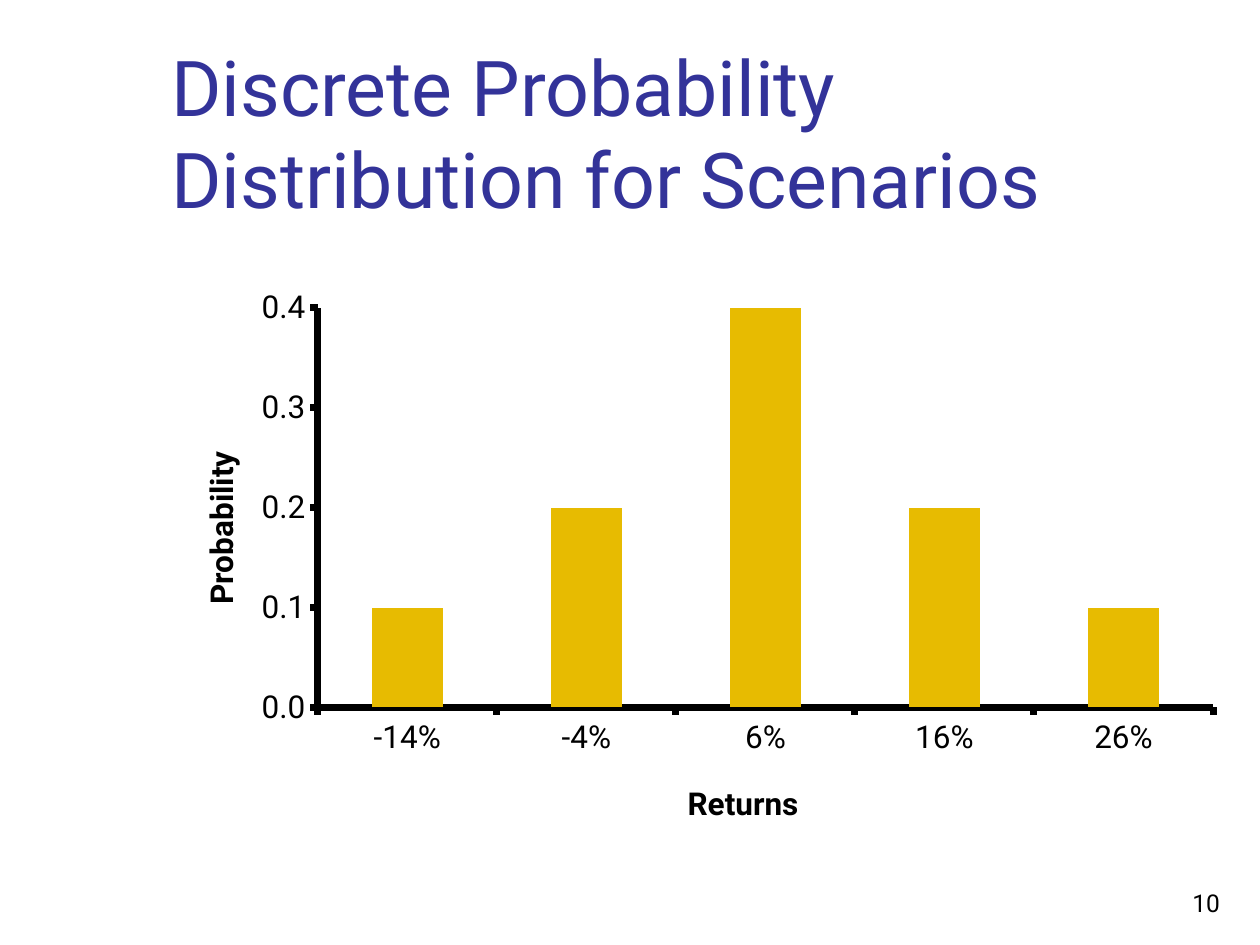
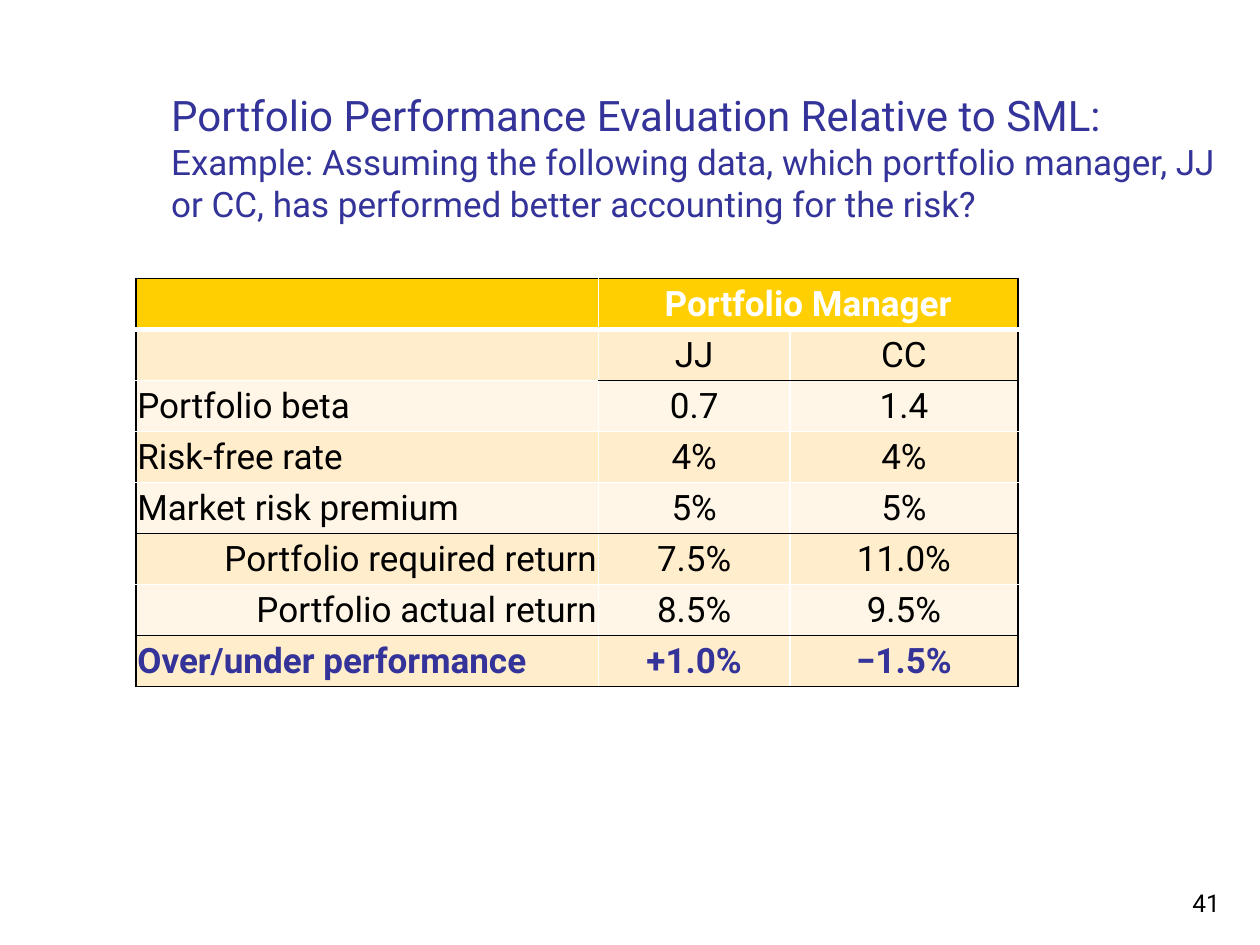
from dataclasses import dataclass

from lxml import etree
from pptx import Presentation
from pptx.chart.data import CategoryChartData
from pptx.dml.color import RGBColor
from pptx.enum.chart import XL_CHART_TYPE as ChartType, XL_TICK_MARK as Tick
from pptx.enum.text import MSO_ANCHOR as Anchor, PP_ALIGN as Align
from pptx.oxml import parse_xml
from pptx.oxml.ns import nsdecls, qn
from pptx.util import Inches, Pt


@dataclass(frozen=True)
class Theme:
    font: str = "Roboto"
    title: str = "333399"
    text: str = "000000"
    white: str = "FFFFFF"
    bar: str = "E7BB01"
    header: str = "FFCF01"
    bands: tuple = ("FFF6E7", "FFEDCC")
    title_size: int = 44
    heading_size: int = 24
    table_size: int = 20
    chart_size: int = 18
    number_size: int = 14


T = Theme()

# Content
CHART_TITLE = [("Discrete Probability Distribution for Scenarios", T.title_size)]
RETURNS = ["-14%", "-4%", "6%", "16%", "26%"]
PROBABILITIES = [0.1, 0.2, 0.4, 0.2, 0.1]

TABLE_TITLE = [
    ("Portfolio Performance Evaluation Relative to SML:", T.heading_size),
    ("Example: Assuming the following data, which portfolio manager, JJ or CC, "
     "has performed better accounting for the risk?", T.table_size),
]
MANAGERS = [
    ("", "Portfolio Manager", ""),
    ("", "JJ", "CC"),
    ("Portfolio beta", "0.7", "1.4"),
    ("Risk-free rate", "4%", "4%"),
    ("Market risk premium", "5%", "5%"),
    ("Portfolio required return", "7.5%", "11.0%"),
    ("Portfolio actual return", "8.5%", "9.5%"),
    ("Over/under performance", "+1.0%", "−1.5%"),
]
RETURN_ROWS = (5, 6)          # right-aligned labels
BLACK_RULES = (0, 5, 7, 8)    # full-width black lines, counted from the top
COL_WIDTHS = (3.67, 1.52, 1.81)

# Layout: left, top, width, height
TITLE_BOX = (1.26, 0.23, 8.52, 1.6)
CHART_BOX = (1.29, 2.21, 8.5, 4.5)
TABLE_BOX = (1.08, 2.21, 7, 3.24)
NUMBER_BOX = (7.7, 6.83, 2.08, 0.5)


def inches(box):
    return [Inches(v) for v in box]


def style(font, size, color, bold=False):
    font.name, font.size, font.bold = T.font, Pt(size), bold
    font.color.rgb = RGBColor.from_string(color)


def add_text(slide, box, lines, color, align=Align.LEFT):
    tf = slide.shapes.add_textbox(*inches(box)).text_frame
    tf.word_wrap, tf.vertical_anchor = True, Anchor.BOTTOM
    p = tf.paragraphs[0]
    p.alignment = align
    for i, (text, size) in enumerate(lines):
        if i:
            p.add_line_break()
        r = p.add_run()
        r.text = text
        style(r.font, size, color)


def add_slide(prs, title, number):
    slide = prs.slides.add_slide(prs.slide_layouts[6])
    add_text(slide, TITLE_BOX, title, T.title)
    add_text(slide, NUMBER_BOX, [(number, T.number_size)], T.text, Align.RIGHT)
    return slide


# Chart
def place(parent, before, inner=False, **fractions):
    """Fix the place of a chart part, in fractions of the chart."""
    for old in parent.findall(qn("c:layout")):
        parent.remove(old)
    layout = etree.Element(qn("c:layout"))
    manual = etree.SubElement(layout, qn("c:manualLayout"))
    settings = {"layoutTarget": "inner"} if inner else {}
    settings.update(xMode="edge", yMode="edge", **fractions)
    for name, value in settings.items():
        etree.SubElement(manual, qn(f"c:{name}")).set("val", str(value))
    parent.find(qn(before)).addprevious(layout)


def format_axis(axis, title, x, y):
    axis.has_major_gridlines = False
    axis.major_tick_mark, axis.minor_tick_mark = Tick.OUTSIDE, Tick.NONE
    axis.format.line.width = Pt(4)
    axis.format.line.color.rgb = RGBColor.from_string(T.text)
    style(axis.tick_labels.font, T.chart_size, T.text)
    r = axis.axis_title.text_frame.paragraphs[0].add_run()
    r.text = title
    style(r.font, T.chart_size, T.text, bold=True)
    place(axis.axis_title._element, "c:overlay", x=x, y=y)


def add_probability_chart(slide):
    data = CategoryChartData(number_format="0.0")
    data.categories = RETURNS
    data.add_series("Series 1", PROBABILITIES)
    chart = slide.shapes.add_chart(
        ChartType.COLUMN_CLUSTERED, *inches(CHART_BOX), data).chart
    chart.has_legend = chart.has_title = False
    style(chart.font, T.chart_size, T.text)
    plot = chart.plots[0]
    plot.gap_width, plot.vary_by_categories = 150, False
    fill = plot.series[0].format.fill
    fill.solid()
    fill.fore_color.rgb = RGBColor.from_string(T.bar)

    format_axis(chart.category_axis, "Returns", x=0.485, y=0.88)
    values = chart.value_axis
    format_axis(values, "Probability", x=0.03, y=0.295)
    values.minimum_scale, values.maximum_scale, values.major_unit = 0, 0.4, 0.1
    values.tick_labels.number_format = "#,##0.0"
    values.tick_labels.number_format_is_linked = False
    area = chart._chartSpace.find(f".//{qn('c:plotArea')}")
    place(area, "c:barChart", inner=True, x=0.145, y=0.052, w=0.836, h=0.705)


# Table
def add_border(cell, side, color, width=1):
    cell._tc.get_or_add_tcPr().append(parse_xml(
        f'<a:ln{side} {nsdecls("a")} w="{Pt(width)}"><a:solidFill>'
        f'<a:srgbClr val="{color}"/></a:solidFill></a:ln{side}>'))


def rule(line, col):
    """Colour and width of the horizontal line above row number `line`."""
    if line == 1:
        return T.white, 3
    black = line in BLACK_RULES or (line == 2 and col > 0)
    return (T.text if black else T.white), 1


def format_cell(cell, row, col, text):
    last_col = len(COL_WIDTHS) - 1
    at_right = col == last_col or cell.is_merge_origin
    add_border(cell, "L", T.white if col else T.text)
    add_border(cell, "R", T.text if at_right else T.white)
    add_border(cell, "T", *rule(row, col))
    add_border(cell, "B", *rule(row + 1, col))
    cell.fill.solid()
    cell.fill.fore_color.rgb = RGBColor.from_string(
        T.bands[row % 2] if row else T.header)
    cell.margin_left = cell.margin_right = cell.margin_top = Inches(0.01)
    cell.margin_bottom = 0
    cell.vertical_anchor = Anchor.MIDDLE
    if not text:
        return
    p = cell.text_frame.paragraphs[0]
    if col:
        p.alignment = Align.CENTER
    else:
        p.alignment = Align.RIGHT if row in RETURN_ROWS else Align.LEFT
    r = p.add_run()
    r.text = text
    last_row = len(MANAGERS) - 1
    color = {0: T.white, last_row: T.title}.get(row, T.text)
    style(r.font, T.table_size, color, bold=row in (0, last_row))


def add_manager_table(slide):
    table = slide.shapes.add_table(
        len(MANAGERS), len(COL_WIDTHS), *inches(TABLE_BOX)).table
    table.first_row = table.horz_banding = False
    for column, width in zip(table.columns, COL_WIDTHS):
        column.width = Inches(width)
    table.cell(0, 1).merge(table.cell(0, 2))
    for row, texts in enumerate(MANAGERS):
        for col, text in enumerate(texts):
            cell = table.cell(row, col)
            if not cell.is_spanned:
                format_cell(cell, row, col, text)


def main():
    prs = Presentation()
    prs.slide_width, prs.slide_height = Inches(10), Inches(7.5)
    add_probability_chart(add_slide(prs, CHART_TITLE, "10"))
    add_manager_table(add_slide(prs, TABLE_TITLE, "41"))
    prs.save("out.pptx")


if __name__ == "__main__":
    main()
